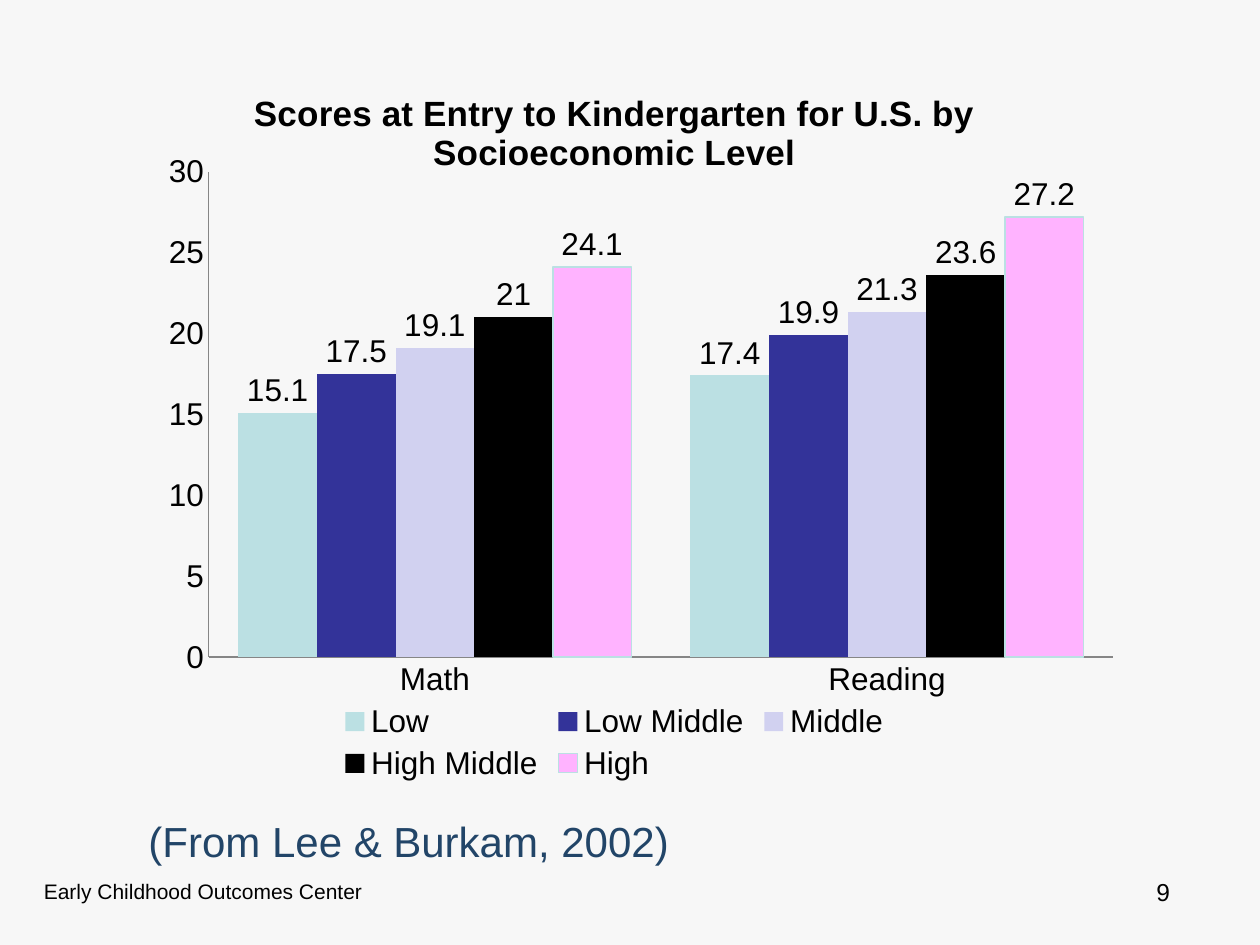
from dataclasses import dataclass

from lxml import etree
from pptx import Presentation, util as u
from pptx.chart.data import CategoryChartData
from pptx.dml.color import RGBColor
from pptx.enum import chart as ch
from pptx.oxml.ns import qn

PX = 9144  # 100 px to the inch
FONT = "Arial"
BACKGROUND = RGBColor(0xF7, 0xF7, 0xF7)
BLACK = RGBColor(0, 0, 0)
NAVY = RGBColor(0x22, 0x45, 0x68)
AXIS_GRAY = RGBColor(0x86, 0x86, 0x86)
TEAL = RGBColor(0xBB, 0xE0, 0xE3)
INDIGO = RGBColor(0x33, 0x33, 0x99)
LAVENDER = RGBColor(0xD1, 0xD1, 0xF0)
PINK = RGBColor(0xFF, 0xB3, 0xFF)


@dataclass
class Level:
    name: str
    math: float
    reading: float
    color: RGBColor
    outline: RGBColor | None = None


@dataclass
class Caption:
    words: str
    left: int
    top: int
    width: int
    height: int
    size: int
    color: RGBColor = BLACK


LEVELS = [
    Level("Low", 15.1, 17.4, TEAL),
    Level("Low Middle", 17.5, 19.9, INDIGO),
    Level("Middle", 19.1, 21.3, LAVENDER),
    Level("High Middle", 21, 23.6, BLACK),
    Level("High", 24.1, 27.2, PINK, TEAL),
]
CAPTIONS = [
    Caption("Early Childhood Outcomes Center", 25, 692, 283, 40, 12),
    Caption("9", 908, 691, 75, 40, 14),
    Caption("(From Lee & Burkam, 2002)", 108, 642, 758, 50, 24, NAVY),
]


def style_font(font, size: int, color: RGBColor = BLACK, bold: bool = False) -> None:
    font.name, font.size, font.bold = FONT, u.Pt(size), bold
    font.color.rgb = color


def add_caption(slide, caption: Caption) -> None:
    box = slide.shapes.add_textbox(caption.left * PX, caption.top * PX,
                                   caption.width * PX, caption.height * PX)
    box.text_frame.word_wrap = True
    box.text_frame.text = caption.words
    style_font(box.text_frame.paragraphs[0].runs[0].font, caption.size, caption.color)


def set_layout(layout, **values) -> None:
    """Fill a chart layout element with manual placement values."""
    manual = etree.SubElement(layout, qn("c:manualLayout"))
    for tag, value in values.items():
        etree.SubElement(manual, qn(f"c:{tag}")).set("val", str(value))


def style_axis(axis) -> None:
    axis.has_major_gridlines = False
    axis.major_tick_mark = axis.minor_tick_mark = ch.XL_TICK_MARK.NONE
    axis.format.line.color.rgb = AXIS_GRAY
    axis.format.line.width = u.Pt(0.75)


def add_scores_chart(slide) -> None:
    scores = CategoryChartData(number_format="General")
    scores.categories = ["Math", "Reading"]
    for level in LEVELS:
        scores.add_series(level.name, (level.math, level.reading))
    chart = slide.shapes.add_chart(ch.XL_CHART_TYPE.COLUMN_CLUSTERED, 75 * PX, 50 * PX,
                                   825 * PX, 575 * PX, scores).chart
    style_font(chart.font, 18)

    # Title laid over the top of the plot
    heading = chart.chart_title.text_frame
    heading.text = "Scores at Entry to Kindergarten for U.S. by Socioeconomic Level"
    style_font(heading.paragraphs[0].runs[0].font, 20, bold=True)
    chart.chart_title._element.find(qn("c:overlay")).set("val", "1")

    # Axes and legend
    style_axis(chart.category_axis)
    style_axis(chart.value_axis)
    chart.value_axis.minimum_scale, chart.value_axis.maximum_scale = 0, 30
    chart.value_axis.major_unit = 5
    chart.has_legend = True
    chart.legend.position = ch.XL_LEGEND_POSITION.BOTTOM
    chart.legend.include_in_layout = False

    # Columns, one colour for each level
    plot = chart.plots[0]
    plot.gap_width, plot.overlap, plot.vary_by_categories = 75, 0, False
    for series, level in zip(plot.series, LEVELS):
        series.format.fill.solid()
        series.format.fill.fore_color.rgb = level.color
        if level.outline is None:
            series.format.line.fill.background()
        else:
            series.format.line.color.rgb = level.outline
            series.format.line.width = u.Pt(0.75)
        series.data_labels.show_value = True
        series.data_labels.position = ch.XL_LABEL_POSITION.OUTSIDE_END

    plot_area = chart._chartSpace.chart.plotArea
    layout = plot_area.find(qn("c:layout"))
    if layout is None:
        layout = etree.Element(qn("c:layout"))
        plot_area.insert(0, layout)
    set_layout(layout, layoutTarget="inner", xMode="edge", yMode="edge",
               x=0.11, y=0.15, w=0.87, h=0.67)


def main() -> None:
    deck = Presentation()
    deck.slide_width, deck.slide_height = 1000 * PX, 750 * PX
    slide = deck.slides.add_slide(deck.slide_layouts[6])
    slide.background.fill.solid()
    slide.background.fill.fore_color.rgb = BACKGROUND
    add_scores_chart(slide)
    for caption in CAPTIONS:
        add_caption(slide, caption)
    deck.save("out.pptx")


if __name__ == "__main__":
    main()
